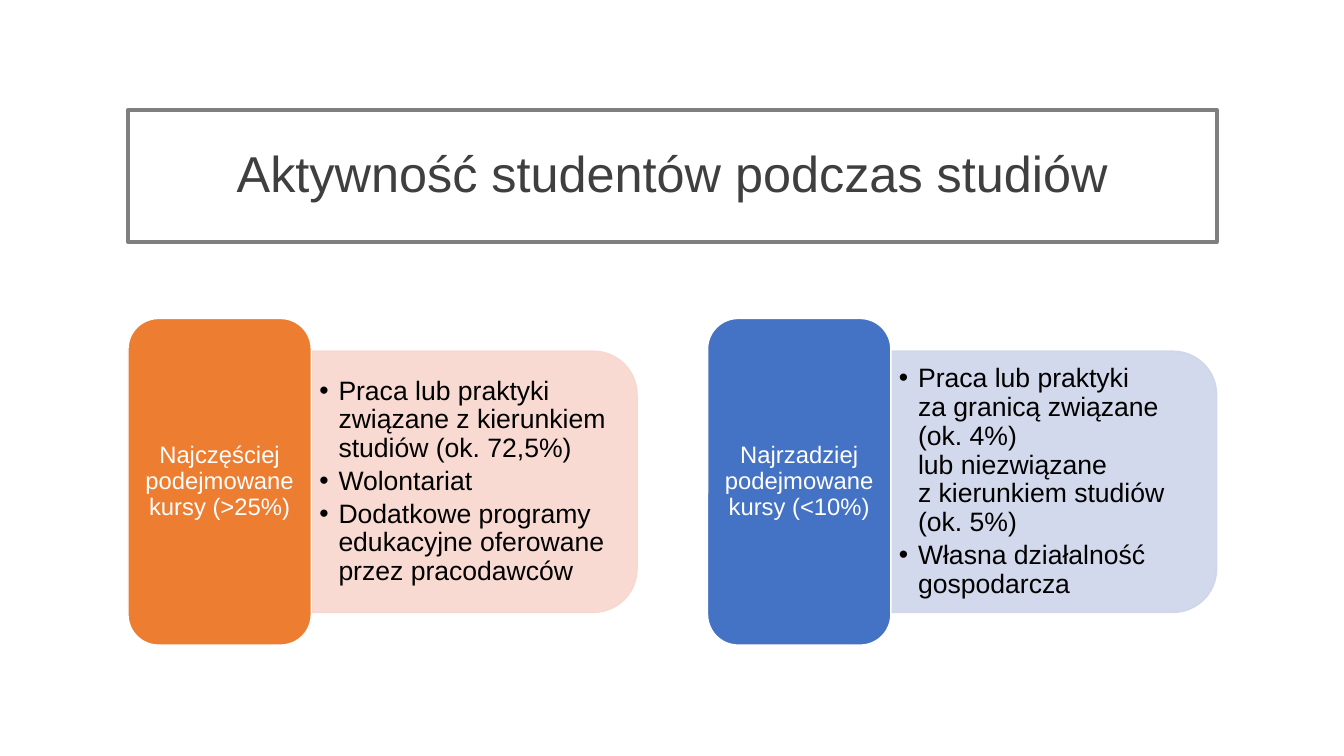
from lxml.etree import SubElement
from pptx import Presentation
from pptx.dml.color import RGBColor
from pptx.enum.shapes import MSO_SHAPE as SHAPE
from pptx.enum.text import MSO_ANCHOR as ANCHOR, MSO_AUTO_SIZE as AUTO, PP_ALIGN as ALIGN
from pptx.oxml.ns import qn
from pptx.util import Emu, Inches, Pt

WHITE = RGBColor(0xFF, 0xFF, 0xFF)
BLACK = RGBColor(0x00, 0x00, 0x00)
TITLE_TEXT = RGBColor(0x3F, 0x3F, 0x3F)
TITLE_LINE = RGBColor(0x7F, 0x7F, 0x7F)
ORANGE = RGBColor(0xED, 0x7D, 0x31)
PEACH = RGBColor(0xF8, 0xD7, 0xCE)
BLUE = RGBColor(0x44, 0x72, 0xC4)
LAVENDER = RGBColor(0xCF, 0xD5, 0xEA)

# Page grid, in inches
LEFT, WIDTH = 1.27, 10.8
TITLE_TOP, TITLE_HEIGHT = 1.09, 1.31
CARD_TOP, CARD_HEIGHT = 3.16, 3.24
CARD_WIDTH, CARD_PITCH = 5.05, 5.75

CARDS = [
    ("Najczęściej podejmowane kursy (>25%)", ORANGE, PEACH,
     ["Praca lub praktyki związane z kierunkiem studiów (ok. 72,5%)",
      "Wolontariat",
      "Dodatkowe programy edukacyjne oferowane przez pracodawców"]),
    ("Najrzadziej podejmowane kursy (<10%)", BLUE, LAVENDER,
     ["Praca lub praktyki \nza granicą związane \n(ok. 4%) \nlub niezwiązane \n"
      "z kierunkiem studiów \n(ok. 5%)",
      "Własna działalność gospodarcza"]),
]


def place(sp, x, y, w, h):
    sp.left, sp.top, sp.width, sp.height = (Inches(v) for v in (x, y, w, h))


def write(sp, paragraphs, size, color, align=ALIGN.CENTER, after=0,
          inset=(0.1, 0.05), indent=None):
    tf = sp.text_frame
    tf.word_wrap, tf.auto_size = True, AUTO.NONE
    tf.vertical_anchor = ANCHOR.MIDDLE
    tf.margin_left = tf.margin_right = Inches(inset[0])
    tf.margin_top = tf.margin_bottom = Inches(inset[1])
    tf.text = "\n".join(" " for _ in paragraphs)
    for p, text in zip(tf.paragraphs, paragraphs):
        p.text = text.replace("\n", "\v")
        p.alignment, p.line_spacing = align, 0.9
        p.space_before, p.space_after = Pt(0), Pt(after)
        for r in p.runs:
            r.font.name, r.font.size = "Arial", Pt(size)
            r.font.color.rgb = color
        if indent:
            pPr = p._p.get_or_add_pPr()
            pPr.set("marL", str(Inches(indent)))
            pPr.set("indent", str(-Inches(indent)))
            SubElement(pPr, qn("a:buFont"), typeface="Arial")
            SubElement(pPr, qn("a:buChar"), char="•")


def paint(sp, fill, line, width, alpha=None):
    sp.fill.solid()
    sp.fill.fore_color.rgb = fill
    sp.line.color.rgb, sp.line.width = line, Pt(width)
    if alpha:
        for clr in sp._element.spPr.iter(qn("a:srgbClr")):
            SubElement(clr, qn("a:alpha"), val=str(alpha * 1000))


def add_shape(slide, kind, x, y, w, h):
    sp = slide.shapes.add_shape(kind, *(Inches(v) for v in (x, y, w, h)))
    sp.shadow.inherit = False
    return sp


def title_box(slide, x, y, w, h):
    sp = slide.shapes.title
    place(sp, x, y, w, h)
    paint(sp, WHITE, TITLE_LINE, 3)
    write(sp, ["Aktywność studentów podczas studiów"], 36, TITLE_TEXT)


def card(slide, body, x, y, w, h, label, dark, light, items):
    label_w = 0.36 * w
    panel_x, panel_w, panel_h = x + label_w, w - label_w, 0.8 * h
    mid_x, mid_y = panel_x + panel_w / 2, y + h / 2

    # Panel, turned so that its rounded corners face right
    panel = add_shape(slide, SHAPE.ROUND_2_SAME_RECTANGLE,
                      mid_x - panel_h / 2, mid_y - panel_w / 2, panel_h, panel_w)
    panel.rotation = 90
    paint(panel, light, light, 1, alpha=90)

    # List, brought in front of the panel
    slide.shapes._spTree.append(body._element)
    body_h = 0.9 * panel_h
    place(body, panel_x, mid_y - body_h / 2, 0.96 * panel_w, body_h)
    write(body, items, 19, BLACK, align=ALIGN.LEFT, after=2.85,
          inset=(0.08, 0.04), indent=0.19)

    # Label
    tab = add_shape(slide, SHAPE.ROUNDED_RECTANGLE, x, y, label_w, h)
    paint(tab, dark, WHITE, 1)
    write(tab, [label], 17, WHITE, inset=(0.07, 0.04))


def main():
    prs = Presentation()
    prs.slide_width, prs.slide_height = Emu(12192000), Inches(7.5)
    slide = prs.slides.add_slide(prs.slide_layouts[3])
    bodies = list(slide.placeholders)[1:]
    title_box(slide, LEFT, TITLE_TOP, WIDTH, TITLE_HEIGHT)
    for i, (body, content) in enumerate(zip(bodies, CARDS)):
        card(slide, body, LEFT + i * CARD_PITCH, CARD_TOP, CARD_WIDTH, CARD_HEIGHT, *content)
    prs.save("out.pptx")


if __name__ == "__main__":
    main()
